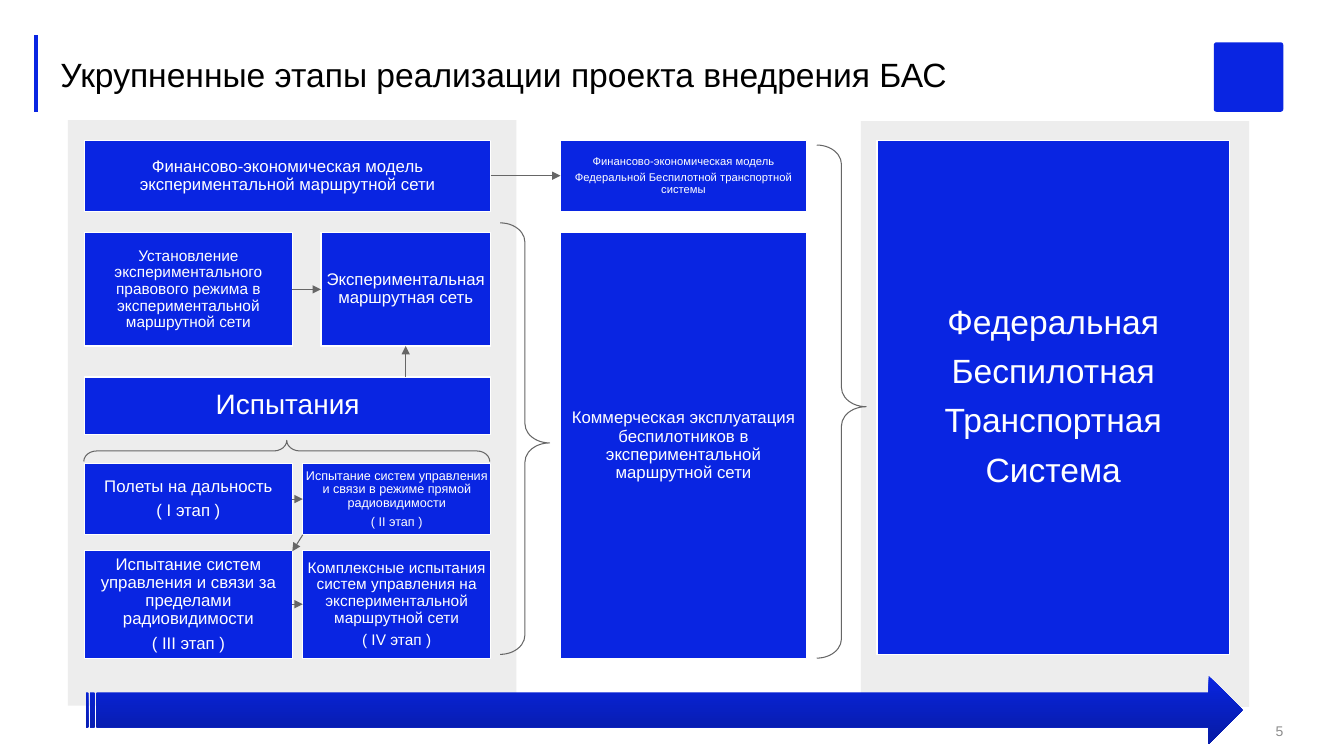
"""Build the slide on the main stages of the unmanned aviation project."""
import pptx
import pptx.dml.color
import pptx.enum.shapes
import pptx.enum.text
import pptx.oxml
import pptx.oxml.ns
import pptx.util

Pt = pptx.util.Pt
SHAPE = pptx.enum.shapes.MSO_SHAPE
ALIGN = pptx.enum.text.PP_ALIGN
BLUE, WHITE, GREY = "0925E2", "FFFFFF", "666666"


def paint(part, fill=None, line=None, weight=0.75):
    """Colour the fill and line of a shape or connector from hex strings."""
    rgb = pptx.dml.color.RGBColor.from_string
    if line:
        part.line.color.rgb = rgb(line)
        part.line.width = Pt(weight)
    else:
        part.line.fill.background()
    if hasattr(part, "fill"):
        part.shadow.inherit = False
        if fill:
            part.fill.solid()
            part.fill.fore_color.rgb = rgb(fill)
        else:
            part.fill.background()
    else:
        part._element.spPr.append(pptx.oxml.parse_xml(f"<a:effectLst {pptx.oxml.ns.nsdecls('a')}/>"))


def write(part, text, size, colour, align, inset=0.0, wrap=True):
    """Put text into a shape, centred vertically."""
    frame = part.text_frame
    frame.text = text
    frame.word_wrap = wrap
    frame.vertical_anchor = pptx.enum.text.MSO_ANCHOR.MIDDLE
    frame.margin_left = frame.margin_right = frame.margin_top = frame.margin_bottom = Pt(inset)
    for paragraph in frame.paragraphs:
        paragraph.alignment = align
        for run in paragraph.runs:
            run.font.name = "Arial"
            run.font.size = Pt(size)
            run.font.color.rgb = pptx.dml.color.RGBColor.from_string(colour)


presentation = pptx.Presentation()
presentation.slide_width, presentation.slide_height = Pt(960), Pt(540)
slide = presentation.slides.add_slide(presentation.slide_layouts[6])
shapes = slide.shapes

emblem = shapes.add_shape(SHAPE.ROUNDED_RECTANGLE, Pt(867), Pt(30.2), Pt(49.7), Pt(49.7))
emblem.adjustments[0] = 0.04
paint(emblem, BLUE)

title_bar = shapes.add_connector(pptx.enum.shapes.MSO_CONNECTOR.STRAIGHT, Pt(25.5), Pt(80), Pt(25.5), Pt(25.2))
paint(title_bar, line=BLUE, weight=3)

title = shapes.add_textbox(Pt(43.2), Pt(38.2), Pt(799), Pt(28.8))
write(title, "Укрупненные этапы реализации проекта внедрения БАС", 24, "000000", ALIGN.LEFT)
page_number = shapes.add_textbox(Pt(904.3), Pt(516.2), Pt(12.4), Pt(12.4))
write(page_number, "5", 10, "8C8C8C", ALIGN.RIGHT, wrap=False)

for left, top, width in [(615, 86.6, 277.3), (48.5, 85.8, 320.4)]:
    backdrop = shapes.add_shape(SHAPE.RECTANGLE, Pt(left), Pt(top), Pt(width), Pt(418.3))
    paint(backdrop, "A6A6A6")
    colour = backdrop._element.spPr.find(".//" + pptx.oxml.ns.qn("a:srgbClr"))
    colour.append(pptx.oxml.parse_xml(f'<a:alpha {pptx.oxml.ns.nsdecls("a")} val="20000"/>'))

WIDE, FIRST, SECOND, NETWORK = (60.5, 290), (60.5, 148.3), (216.3, 134.2), (229.2, 121.3)
MIDDLE, LAST = (400.3, 175.9), (626.5, 251.6)
MODEL, REGIME, TRIALS, EARLY, LATE = (100.2, 50.7), (166.3, 80.8), (269.4, 40.8), (331, 51), (393.4, 77)
stages = [
    (NETWORK, REGIME, 12, "Экспериментальная маршрутная сеть"),
    (FIRST, REGIME, 11, "Установление экспериментального правового режима в экспериментальной маршрутной сети"),
    (WIDE, TRIALS, 20, "Испытания"),
    (FIRST, EARLY, 12, "Полеты на дальность\n( I этап )"),
    (SECOND, EARLY, 9, "Испытание систем управления и связи в режиме прямой радиовидимости\n( II этап )"),
    (FIRST, LATE, 12, "Испытание систем управления и связи за пределами радиовидимости\n( III этап )"),
    (SECOND, LATE, 11, "Комплексные испытания систем управления на экспериментальной маршрутной сети\n( IV этап )"),
    (WIDE, MODEL, 12, "Финансово-экономическая модель экспериментальной маршрутной сети"),
    (MIDDLE, MODEL, 8, "Финансово-экономическая модель\nФедеральной Беспилотной транспортной системы"),
    (MIDDLE, (166.3, 304.1), 12, "Коммерческая эксплуатация беспилотников в экспериментальной маршрутной сети"),
    (LAST, (100.2, 367.2), 24, "Федеральная\nБеспилотная\nТранспортная\nCистема"),
]
for (left, width), (top, height), size, text in stages:
    stage = shapes.add_shape(SHAPE.RECTANGLE, Pt(left), Pt(top), Pt(width), Pt(height))
    paint(stage, BLUE, WHITE, 1)
    write(stage, text, size, WHITE, ALIGN.CENTER, inset=0.72)
    for paragraph in stage.text_frame.paragraphs:
        paragraph.line_spacing = 0.9
        paragraph.space_after = Pt(round(size * 0.39, 1))

links = [
    (208.8, 206.7, 229.2, 206.7),
    (208.8, 356.5, 216.3, 356.5),
    (216.3, 382, 208.8, 393.8),
    (208.8, 431.6, 216.3, 431.6),
    (289.8, 269.4, 289.8, 247.1),
    (350.5, 125.5, 400.3, 125.5),
]
for ends in links:
    link = shapes.add_connector(pptx.enum.shapes.MSO_CONNECTOR.STRAIGHT, *map(Pt, ends))
    paint(link, line=GREY)
    link.line._ln.append(pptx.oxml.parse_xml(f'<a:tailEnd {pptx.oxml.ns.nsdecls("a")} type="triangle"/>'))

braces = [
    (357.3, 159.2, 35.3, 308.2, 0, 0.391, 0.51),
    (197.3, 177.1, 15.1, 290, 270, 0.614, 0.5),
    (583.4, 103.6, 35.3, 366.5, 0, 0.391, 0.51),
]
for left, top, width, height, turn, curl, tip in braces:
    brace = shapes.add_shape(SHAPE.RIGHT_BRACE, Pt(left), Pt(top), Pt(width), Pt(height))
    brace.rotation = turn
    brace.adjustments[0], brace.adjustments[1] = curl, tip
    paint(brace, line=GREY)

timeline = shapes.add_shape(SHAPE.STRIPED_RIGHT_ARROW, Pt(61.4), Pt(482.6), Pt(826.4), Pt(49))
paint(timeline)
timeline.fill.gradient()
timeline.fill.gradient_angle = 270
for stop, position, shade in zip(timeline.fill.gradient_stops, (0, 0.87), (BLUE, "071CAA")):
    stop.position = position
    stop.color.rgb = pptx.dml.color.RGBColor.from_string(shade)

presentation.save("out.pptx")
